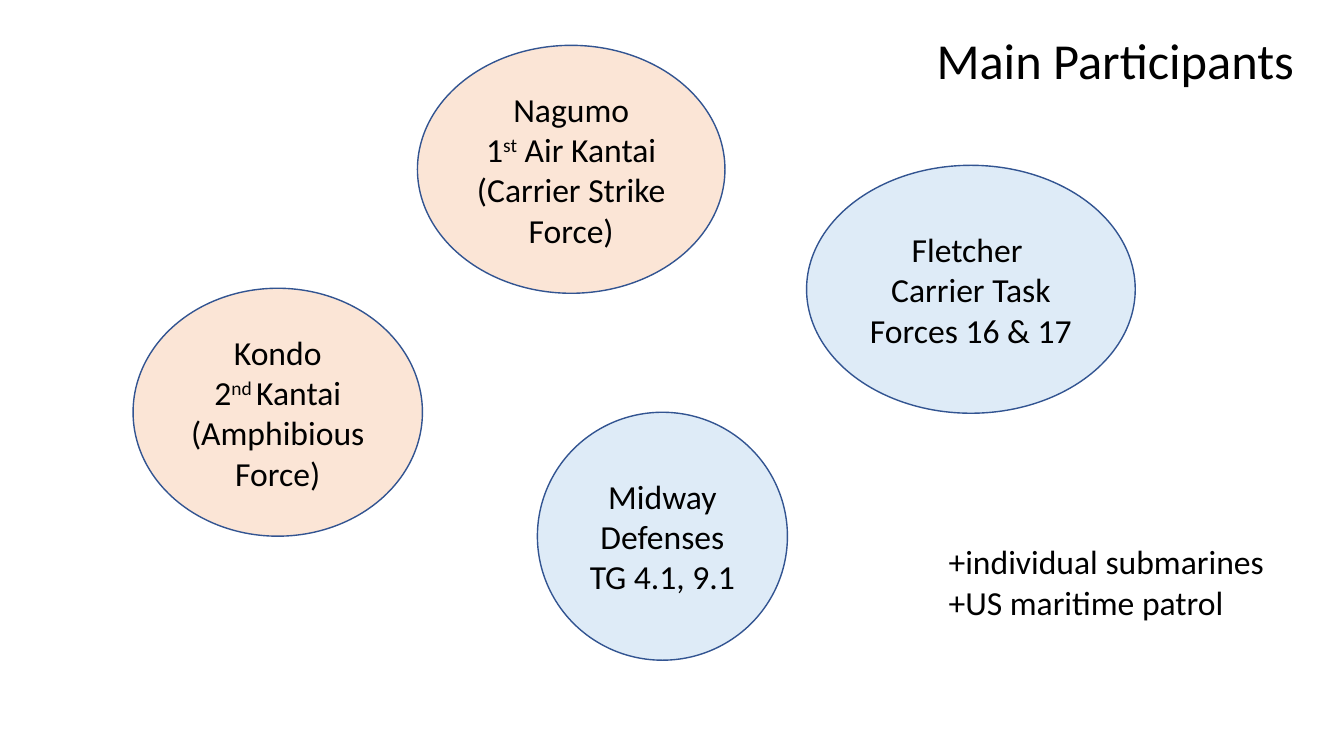
"""Build the slide of the main participants at Midway."""
import pptx
import pptx.util
import pptx.dml.color
import pptx.enum.shapes
import pptx.enum.text

Inches = pptx.util.Inches
Pt = pptx.util.Pt
RGB = pptx.dml.color.RGBColor.from_string
ALIGN = pptx.enum.text.PP_ALIGN
ANCHOR = pptx.enum.text.MSO_ANCHOR

THEME = {
    "font": "Calibri",
    "text": RGB("000000"),
    "line": RGB("325491"),
    "allied": RGB("DEEBF7"),
    "japan": RGB("FBE5D6"),
    "title": Pt(36),
    "body": Pt(24),
}


def write(frame, lines, size, align):
    """Fill a frame with lines, raising the parts between carets."""
    for row, line in enumerate(lines):
        para = frame.add_paragraph() if row else frame.paragraphs[0]
        para.alignment = align
        for part, words in enumerate(line.split("^")):
            run = para.add_run()
            run.text = words
            run.font.name = THEME["font"]
            run.font.size = size
            run.font.color.rgb = THEME["text"]
            if part % 2:
                run.font._element.set("baseline", "30000")


deck = pptx.Presentation()
deck.slide_width = Inches(13.33)
deck.slide_height = Inches(7.5)
slide = deck.slides.add_slide(deck.slide_layouts[6])

forces = [
    (8, 1.64, 3.26, "allied", ["Fletcher ", "Carrier Task Forces 16 & 17"]),
    (5.33, 4.09, 2.48, "allied", ["Midway Defenses", "TG 4.1, 9.1"]),
    (1.32, 2.86, 2.87, "japan", ["Kondo", "2^nd ^Kantai (Amphibious Force)"]),
    (4.14, 0.45, 3.05, "japan",
     ["Nagumo", "1^st^ Air Kantai (Carrier Strike Force)"]),
]
for left, top, width, side, lines in forces:
    oval = slide.shapes.add_shape(
        pptx.enum.shapes.MSO_SHAPE.OVAL,
        Inches(left), Inches(top), Inches(width), Inches(2.46))
    oval.shadow.inherit = False
    oval.fill.solid()
    oval.fill.fore_color.rgb = THEME[side]
    oval.line.color.rgb = THEME["line"]
    oval.line.width = Pt(1)
    oval.text_frame.word_wrap = True
    oval.text_frame.vertical_anchor = ANCHOR.MIDDLE
    write(oval.text_frame, lines, THEME["body"], ALIGN.CENTER)

notes = [
    (9.19, 0.24, 3.78, 0.71, "title", ["Main Participants"]),
    (9.31, 5.32, 3.36, 0.91, "body",
     ["+individual submarines", "+US maritime patrol"]),
]
for left, top, width, height, size, lines in notes:
    box = slide.shapes.add_textbox(
        Inches(left), Inches(top), Inches(width), Inches(height))
    box.text_frame.word_wrap = False
    box.text_frame.auto_size = pptx.enum.text.MSO_AUTO_SIZE.SHAPE_TO_FIT_TEXT
    write(box.text_frame, lines, THEME[size], ALIGN.LEFT)

deck.save("out.pptx")
